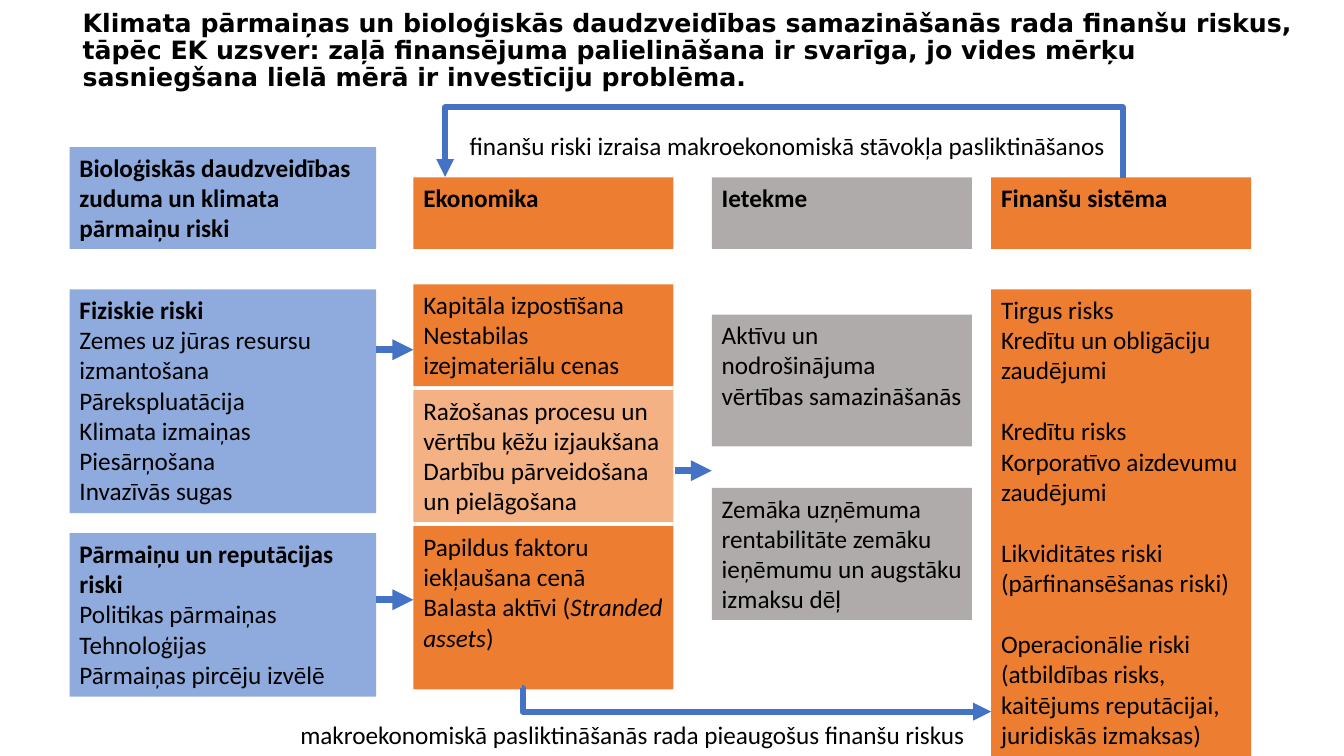
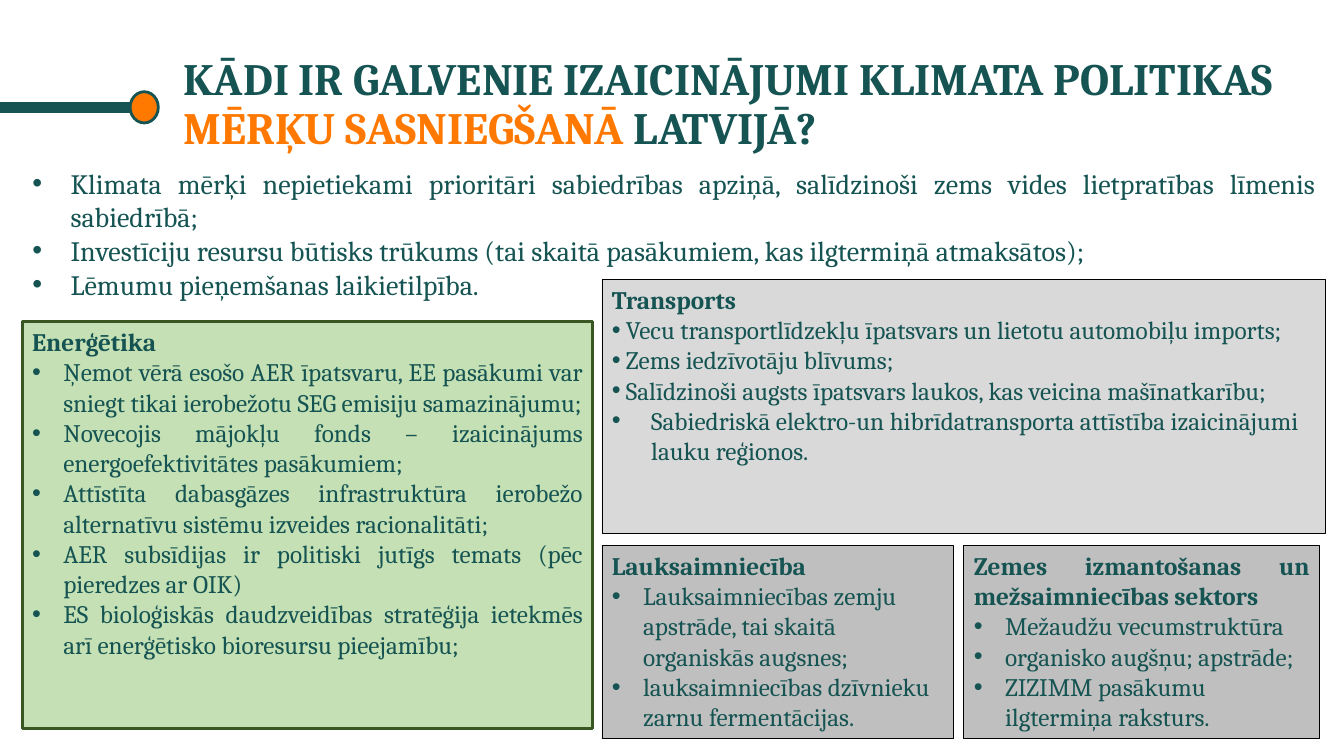
from lxml.etree import SubElement
from pptx import Presentation
from pptx.dml.color import RGBColor
from pptx.enum.shapes import MSO_CONNECTOR, MSO_SHAPE
from pptx.enum.text import MSO_ANCHOR, MSO_AUTO_SIZE, PP_ALIGN
from pptx.oxml.ns import qn
from pptx.util import Inches, Pt

COLOURS = {
    "black": "000000", "blue": "8FAADC", "orange": "ED7D31", "peach": "F4B183",
    "grey": "AFABAB", "arrow": "4472C4", "teal": "155452", "accent": "FF7900",
    "green": "C5E0B4", "dark_green": "385723", "silver": "BFBFBF", "pale": "D9D9D9",
}
FLOW_FONT = {"font": "Calibri", "size": 18, "colour": "black"}
CARD_FONT = {"font": "Cambria", "size": 18, "colour": "teal"}
COLUMNS = {
    "risks": (0.69, 3.04, "blue"),
    "economy": (4.1, 2.58, "orange"),
    "impact": (7.06, 2.58, "grey"),
    "finance": (9.83, 2.58, "orange"),
}
FLOW_BOXES = [
    ("risks", 1.46, 1.01, 2, ["Bioloģiskās daudzveidības", "zuduma un klimata pārmaiņu riski"]),
    ("risks", 2.87, 2.22, 1, ["Fiziskie riski", "Zemes uz jūras resursu", "izmantošana", "Pārekspluatācija",
                              "Klimata izmaiņas", "Piesārņošana", "Invazīvās sugas"]),
    ("risks", 5.29, 1.62, 1, ["Pārmaiņu un reputācijas riski", "Politikas pārmaiņas", "Tehnoloģijas",
                              "Pārmaiņas pircēju izvēlē"]),
    ("economy", 1.76, 0.71, 1, ["Ekonomika"]),
    ("economy", 2.82, 1.01, 0, ["Kapitāla izpostīšana", "Nestabilas izejmateriālu cenas"]),
    ("impact", 1.76, 0.71, 1, ["Ietekme"]),
    ("impact", 3.12, 1.31, 0, ["Aktīvu un nodrošinājuma vērtības samazināšanās"]),
    ("impact", 4.84, 1.31, 0, ["Zemāka uzņēmuma rentabilitāte zemāku ieņēmumu un augstāku izmaksu dēļ"]),
    ("finance", 1.76, 0.71, 1, ["Finanšu sistēma"]),
]
DISRUPTION = ["Ražošanas procesu un vērtību ķēžu izjaukšana", "Darbību pārveidošana un pielāgošana"]
STRANDED = ["Papildus faktoru iekļaušana cenā", "Balasta aktīvi (Stranded assets)"]
FINANCE_RISKS = [
    "Tirgus risks", "Kredītu un obligāciju zaudējumi", "Kredītu risks", "Korporatīvo aizdevumu zaudējumi",
    "Likviditātes riski (pārfinansēšanas riski)",
    "Operacionālie riski (atbildības risks, kaitējums reputācijai, juridiskās izmaksas)",
]
CHALLENGES = [
    "Klimata mērķi nepietiekami prioritāri sabiedrības apziņā, salīdzinoši zems vides lietpratības līmenis "
    "sabiedrībā;",
    "Investīciju resursu būtisks trūkums (tai skaitā pasākumiem, kas ilgtermiņā atmaksātos);",
    "Lēmumu pieņemšanas laikietilpība.",
]
SECTOR_CARDS = [
    ((0.22, 3.19, 5.66, 4.04), "green", ("dark_green", 2), 6, [0.31] * 5, [
        "Enerģētika",
        "Ņemot vērā esošo AER īpatsvaru, EE pasākumi var sniegt tikai ierobežotu SEG emisiju samazinājumu;",
        "Novecojis mājokļu fonds – izaicinājums energoefektivitātes pasākumiem;",
        "Attīstīta dabasgāzes infrastruktūra ierobežo alternatīvu sistēmu izveides racionalitāti;",
        "AER subsīdijas ir politiski jutīgs temats (pēc pieredzes ar OIK)",
        "ES bioloģiskās daudzveidības stratēģija ietekmēs arī enerģētisko bioresursu pieejamību;"]),
    ((9.56, 5.41, 3.53, 1.92), "silver", ("black", 0.5), 1, [0.31] * 3, [
        "Zemes izmantošanas un mežsaimniecības sektors", "Mežaudžu vecumstruktūra",
        "organisko augšņu; apstrāde;", "ZIZIMM pasākumu ilgtermiņa raksturs."]),
    ((5.97, 5.41, 3.49, 1.92), "silver", ("black", 0.5), 0, [0.31] * 2, [
        "Lauksaimniecība", "Lauksaimniecības zemju apstrāde, tai skaitā organiskās augsnes;",
        "lauksaimniecības dzīvnieku zarnu fermentācijas."]),
    ((5.97, 2.77, 7.18, 2.52), "pale", ("black", 0.5), 0, [0.14] * 3 + [0.39], [
        "Transports", "Vecu transportlīdzekļu īpatsvars un lietotu automobiļu imports;",
        "Zems iedzīvotāju blīvums;", "Salīdzinoši augsts īpatsvars laukos, kas veicina mašīnatkarību;",
        "Sabiedriskā elektro-un hibrīdatransporta attīstība izaicinājumi lauku reģionos."]),
]


def rgb(name):
    """Return the named colour."""
    return RGBColor.from_string(COLOURS[name])


def inches(values):
    """Convert several numbers to lengths."""
    return [Inches(value) for value in values]


def write(frame, lines, font, size, colour, bold_lines=0, justified=0, accent=None):
    """Write styled paragraphs and return the span that holds the accent phrase."""
    frame.text = "\n".join(lines)
    frame.word_wrap = True
    frame.auto_size = MSO_AUTO_SIZE.NONE
    frame.vertical_anchor = MSO_ANCHOR.TOP
    accent_span = None
    for index, para in enumerate(frame.paragraphs):
        para.alignment = PP_ALIGN.JUSTIFY if index < justified else PP_ALIGN.LEFT
        para.space_before = Pt(0)
        if accent and accent in para.text:
            before, phrase, after = para.text.partition(accent)
            para.text = before
            accent_span = para.add_run()
            accent_span.text = phrase
            para.add_run().text = after
        for span in para.runs:
            span.font.name = font
            span.font.size = Pt(size)
            span.font.bold = index < bold_lines
            span.font.color.rgb = rgb(colour)
    return accent_span


def add_bullet(para, indent):
    """Give a paragraph a hanging bullet."""
    properties = para._p.get_or_add_pPr()
    properties.set("marL", str(Inches(indent)))
    properties.set("indent", str(-Inches(indent)))
    SubElement(properties, qn("a:buFont"), typeface="Arial")
    SubElement(properties, qn("a:buChar"), char="•")


def place(shape, area):
    """Move a placeholder to an area."""
    shape.left, shape.top, shape.width, shape.height = inches(area)


def set_title(page, area, text, font, size, colour, accent=None):
    """Fill the title placeholder and return its accent span."""
    title = page.shapes.title
    place(title, area)
    span = write(title.text_frame, [text], font, size, colour, 1, accent=accent)
    title.text_frame.vertical_anchor = MSO_ANCHOR.MIDDLE
    title.text_frame.paragraphs[0].line_spacing = 0.9
    return span


def add_box(page, area, fill, border=None, kind=MSO_SHAPE.RECTANGLE):
    """Add a flat filled shape with an optional border."""
    box = page.shapes.add_shape(kind, *inches(area))
    box.shadow.inherit = False
    box.fill.solid()
    box.fill.fore_color.rgb = rgb(fill)
    if border:
        box.line.color.rgb = rgb(border[0])
        box.line.width = Pt(border[1])
    else:
        box.line.fill.background()
    return box


def add_flow_box(page, column, top, height, bold_lines, lines, fill=None, accent=None):
    """Add a text box to a flow column and return its frame and accent span."""
    left, width, column_fill = COLUMNS[column]
    frame = add_box(page, (left, top, width, height), fill or column_fill).text_frame
    return frame, write(frame, lines, **FLOW_FONT, bold_lines=bold_lines, accent=accent)


def add_caption(page, area, text):
    """Add a label beside an arrow."""
    write(page.shapes.add_textbox(*inches(area)).text_frame, [text], **FLOW_FONT)


def add_line(page, start, end, colour, weight, arrow=True, kind=MSO_CONNECTOR.STRAIGHT):
    """Add a connector without shadow."""
    line = page.shapes.add_connector(kind, *inches(start + end))
    line.line.color.rgb = rgb(colour)
    line.line.width = Pt(weight)
    properties = line.element.spPr
    if arrow:
        SubElement(properties.find(qn("a:ln")), qn("a:tailEnd"), type="triangle")
    SubElement(properties, qn("a:effectLst"))
    return line


def add_elbow(page, start, end, bend):
    """Add a bent arrow with its bend at a share of its width."""
    line = add_line(page, start, end, "arrow", 4.25, kind=MSO_CONNECTOR.ELBOW)
    geometry = line.element.spPr.find(qn("a:prstGeom"))
    values = geometry.find(qn("a:avLst"))
    if values is None:
        values = SubElement(geometry, qn("a:avLst"))
    SubElement(values, qn("a:gd"), name="adj1", fmla=f"val {round(bend * 100000)}")
    return line


def build_risk_flow(deck):
    """Build the slide on how climate risks reach finance."""
    page = deck.slides.add_slide(deck.slide_layouts[5])
    set_title(page, (0.72, 0.23, 12.47, 0.56),
              "Klimata pārmaiņas un bioloģiskās daudzveidības samazināšanās rada finanšu riskus, tāpēc EK uzsver: "
              "zaļā finansējuma palielināšana ir svarīga, jo vides mērķu sasniegšana lielā mērā ir investīciju "
              "problēma.", "DejaVu Sans", 18, "black")
    for flow_box in FLOW_BOXES:
        add_flow_box(page, *flow_box)
    add_flow_box(page, "economy", 3.87, 1.31, 0, DISRUPTION, fill="peach")
    _, term = add_flow_box(page, "economy", 5.22, 1.62, 0, STRANDED, accent="Stranded assets")
    term.font.italic = True
    frame, _ = add_flow_box(page, "finance", 2.87, 4.63, 0, FINANCE_RISKS)
    for index in (2, 4, 5):
        frame.paragraphs[index].space_before = Pt(22)
    add_caption(page, (4.56, 1.24, 6.56, 0.4), "finanšu riski izraisa makroekonomiskā stāvokļa pasliktināšanos")
    add_caption(page, (2.88, 7.09, 6.86, 0.4), "makroekonomiskā pasliktināšanās rada pieaugošus finanšu riskus")
    feedback = add_elbow(page, (7.77, -1.6), (7.78, 5.12), 71)
    frame_properties = feedback.element.spPr.find(qn("a:xfrm"))
    frame_properties.set("rot", str(270 * 60000))
    frame_properties.set("flipV", "1")
    add_elbow(page, (5.18, 6.83), (9.83, 7.06), 0.001)
    for left, middle in ((3.73, 3.47), (3.73, 5.95), (6.69, 4.67)):
        add_line(page, (left, middle), (left + 0.37, middle), "arrow", 5)


def build_challenges(deck):
    """Build the slide on climate policy challenges by sector."""
    page = deck.slides.add_slide(deck.slide_layouts[1])
    goal = set_title(page, (1.72, 0.32, 11.43, 1.45),
                     "KĀDI IR GALVENIE IZAICINĀJUMI KLIMATA POLITIKAS MĒRĶU SASNIEGŠANĀ LATVIJĀ?",
                     "Cambria", 32, "teal", accent="MĒRĶU SASNIEGŠANĀ")
    goal.font.color.rgb = rgb("accent")
    add_line(page, (0, 1.07), (1.32, 1.07), "teal", 8, arrow=False)
    add_box(page, (1.29, 0.91, 0.28, 0.31), "accent", ("teal", 2), MSO_SHAPE.OVAL)
    body = page.placeholders[1]
    place(body, (0.22, 1.6, 12.93, 1.45))
    write(body.text_frame, CHALLENGES, "Cambria", 20, "teal", justified=len(CHALLENGES))
    for para in body.text_frame.paragraphs:
        add_bullet(para, 0.38)
    for area, fill, border, justified, indents, lines in SECTOR_CARDS:
        frame = add_box(page, area, fill, border).text_frame
        write(frame, lines, **CARD_FONT, bold_lines=1, justified=justified)
        for para, indent in zip(frame.paragraphs[1:], indents):
            add_bullet(para, indent)


def main():
    """Build and save the deck."""
    deck = Presentation()
    deck.slide_width, deck.slide_height = inches((13.33, 7.5))
    build_risk_flow(deck)
    build_challenges(deck)
    deck.save("out.pptx")


if __name__ == "__main__":
    main()
